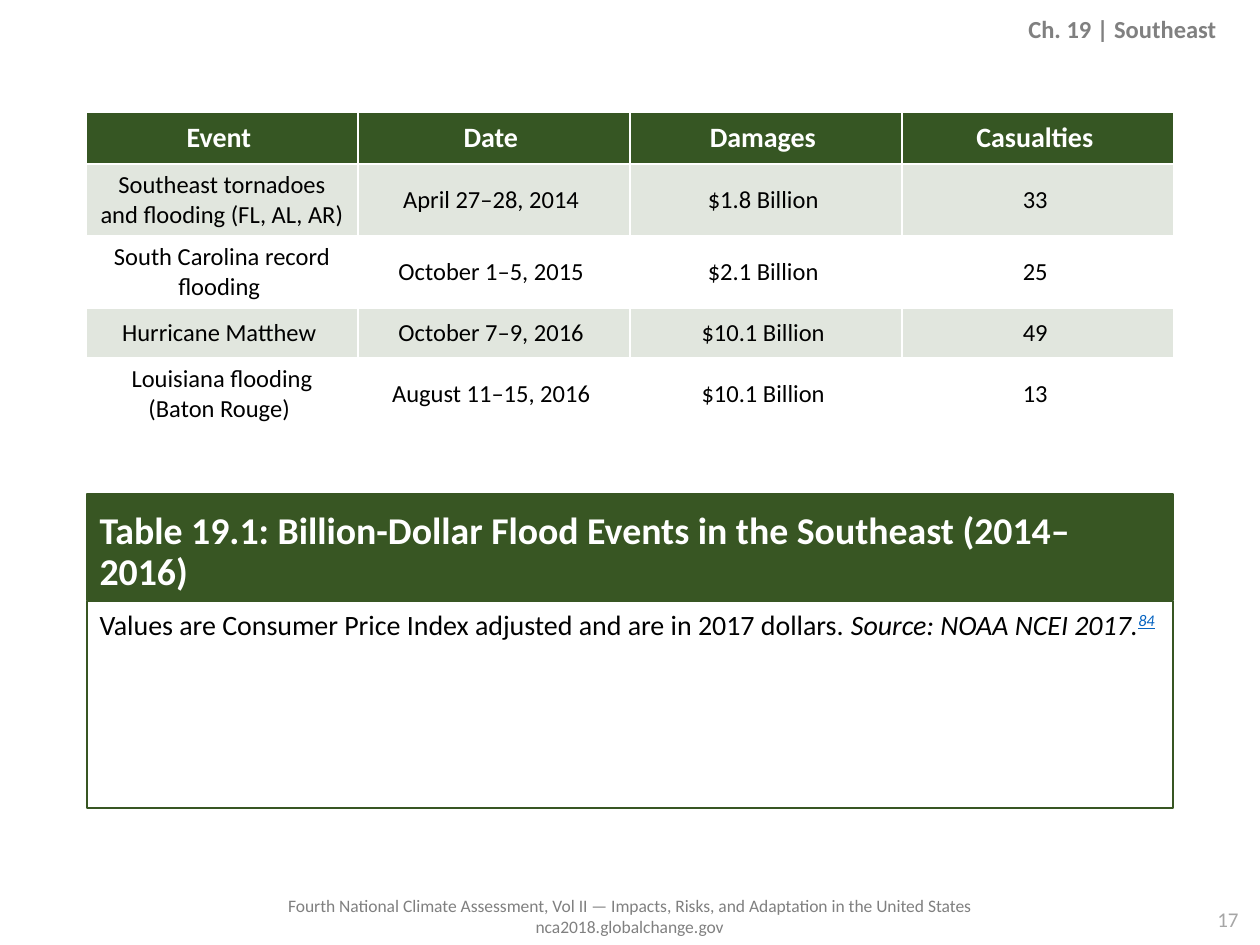
"""Builds the Southeast slide on billion-dollar flood events."""
from lxml import etree
from pptx import Presentation
from pptx.dml.color import RGBColor
from pptx.enum.text import MSO_ANCHOR, MSO_AUTO_SIZE, PP_ALIGN
from pptx.oxml.ns import qn
from pptx.util import Pt

LEFT, CENTER, RIGHT = PP_ALIGN.LEFT, PP_ALIGN.CENTER, PP_ALIGN.RIGHT
TOP, MIDDLE, BOTTOM = MSO_ANCHOR.TOP, MSO_ANCHOR.MIDDLE, MSO_ANCHOR.BOTTOM
NO_FIT = MSO_AUTO_SIZE.NONE
EMU_PER_PX = 914400 / 126
THEME = {
    "font": "Calibri",
    "green": "385623", "header": "365623", "band": "E1E6DE", "white": "FFFFFF",
    "black": "000000", "gray": "808080", "number": "A6A6A6", "link": "0563C1",
    "title_size": 21.6, "body_size": 16, "cell_size": 14, "number_size": 12, "footer_size": 10,
}


def px(length):
    return round(length * EMU_PER_PX)


def style(para, size, color, align, bold=False):
    para.alignment = align
    para.font.name = THEME["font"]
    para.font.size = Pt(THEME[size])
    para.font.bold = bold
    para.font.color.rgb = RGBColor.from_string(THEME[color])


deck = Presentation()
deck.slide_width, deck.slide_height = px(1260), px(945)
slide = deck.slides.add_slide(deck.slide_layouts[1])
title, body = slide.placeholders

labels = [
    ("Fourth National Climate Assessment, Vol II — Impacts, Risks, and Adaptation in the United States\n"
     "nca2018.globalchange.gov", (256, 889, 747, 56), "footer_size", "gray", CENTER, TOP, False),
    ("17", (1010, 902, 241, 34), "number_size", "number", RIGHT, MIDDLE, False),
    ("Ch. 19 | Southeast", (29, 9, 1200, 39), "cell_size", "gray", RIGHT, MIDDLE, True),
]
for text, place, size, color, align, anchor, bold in labels:
    box = slide.shapes.add_textbox(*map(px, place))
    frame = box.text_frame
    frame.word_wrap = True
    frame.vertical_anchor = anchor
    frame.text = text
    for para in frame.paragraphs:
        style(para, size, color, align, bold)

events = [
    ("Event", "Date", "Damages", "Casualties"),
    ("Southeast tornadoes and flooding (FL, AL, AR)", "April 27–28, 2014", "$1.8 Billion", "33"),
    ("South Carolina record flooding", "October 1–5, 2015", "$2.1 Billion", "25"),
    ("Hurricane Matthew", "October 7–9, 2016", "$10.1 Billion", "49"),
    ("Louisiana flooding (Baton Rouge)", "August 11–15, 2016", "$10.1 Billion", "13"),
]
row_heights = [52, 72, 72, 50, 72]
table = slide.shapes.add_table(5, 4, px(86), px(112), px(1088), px(sum(row_heights))).table
for column in table.columns:
    column.width = px(272)
for row_index, (row, height, values) in enumerate(zip(table.rows, row_heights, events)):
    row.height = px(height)
    is_header = row_index == 0
    fill = "header" if is_header else "band" if row_index % 2 else "white"
    for cell, value in zip(row.cells, values):
        cell.text = f"{value} "
        cell.vertical_anchor = MIDDLE
        style(cell.text_frame.paragraphs[0], "body_size" if is_header else "cell_size",
              "white" if is_header else "black", CENTER, is_header)
        properties = cell._tc.get_or_add_tcPr()
        for side in ("a:lnL", "a:lnR", "a:lnT", "a:lnB"):
            border = etree.SubElement(properties, qn(side), w=str(Pt(1)))
            paint = etree.SubElement(border, qn("a:solidFill"))
            etree.SubElement(paint, qn("a:srgbClr"), val=THEME["white"])
        cell.fill.solid()
        cell.fill.fore_color.rgb = RGBColor.from_string(THEME[fill])

for shape, top, height, anchor in ((title, 494, 106, BOTTOM), (body, 601, 207, TOP)):
    shape.left, shape.top, shape.width, shape.height = map(px, (87, top, 1086, height))
    shape.line.color.rgb = RGBColor.from_string(THEME["green"])
    shape.line.width = Pt(1.5)
    shape.text_frame.auto_size = NO_FIT
    shape.text_frame.word_wrap = True
    shape.text_frame.vertical_anchor = anchor

title.fill.solid()
title.fill.fore_color.rgb = RGBColor.from_string(THEME["green"])
title.text_frame.text = "Table 19.1: Billion-Dollar Flood Events in the Southeast (2014–\v2016)"
heading = title.text_frame.paragraphs[0]
heading.line_spacing = 0.9
style(heading, "title_size", "white", LEFT, True)

note = body.text_frame.paragraphs[0]
note_properties = note._p.get_or_add_pPr()
note_properties.set("marL", "0")
note_properties.set("indent", "0")
etree.SubElement(note_properties, qn("a:buNone"))
note.space_before, note.space_after = Pt(0), Pt(6)
style(note, "body_size", "black", LEFT)
for text, italic in (
    ("Values are Consumer Price Index adjusted and are in 2017 dollars. ", False),
    ("Source: NOAA NCEI 2017.", True),
    ("84", True),
):
    span = note.add_run()
    span.text = text
    span.font.italic = italic
span.font.underline = True
span.font.color.rgb = RGBColor.from_string(THEME["link"])
span._r.get_or_add_rPr().set("baseline", "30000")

deck.save("out.pptx")
